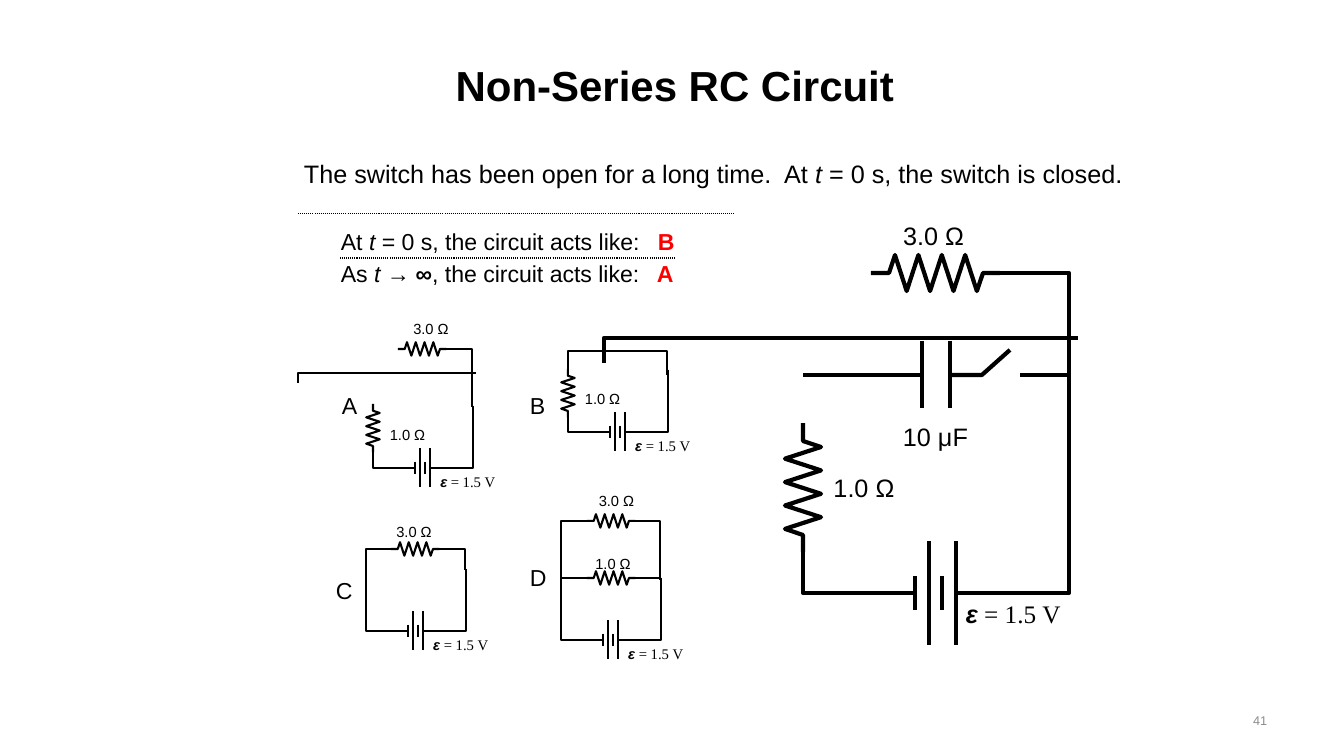
from pptx import Presentation
from pptx.dml.color import RGBColor
from pptx.enum.dml import MSO_LINE
from pptx.enum.shapes import MSO_CONNECTOR
from pptx.enum.text import MSO_ANCHOR, PP_ALIGN
from pptx.oxml.ns import qn
from pptx.util import Emu, Pt

LEFT, CENTER, RIGHT = PP_ALIGN.LEFT, PP_ALIGN.CENTER, PP_ALIGN.RIGHT
TOP, MIDDLE = MSO_ANCHOR.TOP, MSO_ANCHOR.MIDDLE
STRAIGHT, DOTTED = MSO_CONNECTOR.STRAIGHT, MSO_LINE.ROUND_DOT
PX = 914400 / 100.8
BLACK, RED, GRAY = "000000", "FF0000", "8C8C8C"
ITALIC, BOLD = {"italic": True}, {"bold": True}
SERIF = {"name": "Times New Roman"}

# Text: left, top, width, height, size, alignment, anchor, colour, [(words, format)]
TEXTS = [
    (335, 37, 680, 95, 30, CENTER, MIDDLE, BLACK, [("Non-Series RC Circuit", BOLD)]),
    (294, 153, 840, 40, 18, LEFT, TOP, BLACK, [
        ("The switch has been open for a long time.  At ", {}), ("t", ITALIC),
        (" = 0 s, the switch is closed.", {})]),
    (331, 222, 322, 38, 16.5, LEFT, TOP, BLACK, [
        ("At ", {}), ("t", ITALIC), (" = 0 s, the circuit acts like:", {})]),
    (331, 254, 322, 38, 16.5, LEFT, TOP, BLACK, [
        ("As ", {}), ("t ", ITALIC), ("→ ", SERIF), ("∞", BOLD),
        (", the circuit acts like:", {})]),
    (964, 701, 313, 40, 9, RIGHT, MIDDLE, GRAY, [("41", {})]),
]
# Letters: letter, left, top, colour, format
LETTERS = [
    ("A", 332, 386, BLACK, {}), ("B", 520, 386, BLACK, {}),
    ("C", 326, 572, BLACK, {}), ("D", 520, 558, BLACK, {}),
    ("B", 648, 222, RED, BOLD), ("A", 647, 254, RED, BOLD),
]
DOTTED_RULES = [[(298, 214), (734, 214)], [(340, 258), (675, 258)]]

LARGE = {"scale": 1, "line": 3, "size": 18, "label_height": 40}
SMALL = {"scale": 0.375, "line": 1.5, "size": 10.5, "label_height": 28}
# Labels: words, left, top, width, alignment. Resistors: left, top, upright or not.
CIRCUITS = [
    {"style": LARGE, "battery": (915, 593), "emf_width": 122,
     "resistors": [(871, 273, False), (803, 423, True)],
     "labels": [("3.0 Ω", 880, 215, 107, CENTER), ("1.0 Ω", 823, 467, 82, CENTER),
                ("10 μF", 882, 416, 107, CENTER)],
     "wires": [[(993, 273), (1069, 273), (1069, 429)],
               [(604, 363), (604, 338), (1078, 338)],
               [(950, 341), (950, 408)], [(922, 341), (922, 408)],
               [(1020, 375), (1069, 375)], [(803, 375), (922, 375)],
               [(950, 375), (982, 375), (1010, 350)]]},
    {"style": SMALL, "battery": (415, 468), "emf_width": 90,
     "resistors": [(398, 349, False), (373, 404, True)],
     "labels": [("3.0 Ω", 396, 315, 70, CENTER), ("1.0 Ω", 380, 421, 64, LEFT)],
     "wires": [[(444, 349), (472, 349), (472, 407)],
               [(298, 383), (298, 373), (476, 373)]]},
    {"style": SMALL, "battery": (610, 432), "emf_width": 90,
     "resistors": [(568, 369, True)],
     "labels": [("1.0 Ω", 575, 385, 64, LEFT)],
     "wires": [[(639, 351), (667, 351), (667, 375)],
               [(568, 375), (568, 351), (648, 351)]]},
    {"style": SMALL, "battery": (408, 631), "emf_width": 90,
     "resistors": [(391, 549, False)],
     "labels": [("3.0 Ω", 382, 518, 64, CENTER)],
     "wires": [[(437, 549), (465, 549), (465, 570)],
               [(366, 619), (366, 549), (395, 549)]]},
    {"style": SMALL, "battery": (603, 640), "emf_width": 90,
     "resistors": [(587, 578, False), (587, 521, False)],
     "labels": [("3.0 Ω", 584, 487, 65, CENTER), ("1.0 Ω", 581, 550, 64, CENTER)],
     "wires": [[(632, 521), (660, 521), (660, 580)],
               [(561, 632), (561, 521), (590, 521)],
               [(561, 578), (590, 578)], [(632, 578), (660, 578)]]},
]
EMF = [("ε", {"bold": True, "italic": True}), (" = 1.5 V", SERIF)]
# Battery parts at full scale, measured from its leftmost plate
BATTERY = [[(0, 0), (-112, 0), (-112, -47)], [(154, -166), (154, 0), (41, 0)]]
BATTERY += [[(x, -half), (x, half)] for x, half in [(0, 17), (14, 52), (27, 17), (41, 52)]]
EMF_LEFT = 41
# Resistor at full scale as (along, across): two leads and eight peaks
RESISTOR = [(0, 0), (18, 0)]
RESISTOR += [(24 + 11.7 * peak, 18 if peak % 2 else -18) for peak in range(8)]
RESISTOR += [(112, 0), (129, 0)]


def emu(pixels):
    return Emu(round(pixels * PX))


def color(value):
    return RGBColor.from_string(value)


def add_text(page, frame, size, align, anchor, ink, spans):
    box = page.shapes.add_textbox(*map(emu, frame))
    box.text_frame.word_wrap = True
    box.text_frame.vertical_anchor = anchor
    para = box.text_frame.paragraphs[0]
    para.alignment = align
    for words, changes in spans:
        span = para.add_run()
        span.text = words
        span.font.color.rgb = color(ink)
        for key, value in {"name": "Arial", "size": Pt(size), **changes}.items():
            setattr(span.font, key, value)


def add_wire(page, points, width, dash=None):
    """Draw two points as a connector and more points as an open outline."""
    points = [(emu(x), emu(y)) for x, y in points]
    if len(points) == 2:
        wire = page.shapes.add_connector(STRAIGHT, *points[0], *points[1])
        properties = wire._element.spPr
        properties.append(properties.makeelement(qn("a:effectLst"), {}))
    else:
        builder = page.shapes.build_freeform(*points[0], scale=1.0)
        builder.add_line_segments(points[1:], close=False)
        wire = builder.convert_to_shape()
        wire.fill.background()
        wire.shadow.inherit = False
    wire.line.color.rgb = color(BLACK)
    wire.line.width = Pt(width)
    if dash:
        wire.line.dash_style = dash


def place(points, left, top, scale):
    return [(left + x * scale, top + y * scale) for x, y in points]


def add_circuit(page, circuit):
    style = circuit["style"]
    scale, size, height = style["scale"], style["size"], style["label_height"]
    left, top = circuit["battery"]
    wires = circuit["wires"] + [place(part, left, top, scale) for part in BATTERY]
    for x, y, upright in circuit["resistors"]:
        zigzag = [(-across, along) for along, across in RESISTOR] if upright else RESISTOR
        wires.append(place(zigzag, x, y, scale))
    for points in wires:
        add_wire(page, points, style["line"])
    emf_frame = (left + EMF_LEFT * scale, top, circuit["emf_width"], height)
    add_text(page, emf_frame, size, LEFT, TOP, BLACK, EMF)
    for words, x, y, width, align in circuit["labels"]:
        add_text(page, (x, y, width, height), size, align, TOP, BLACK, [(words, {})])


def main():
    deck = Presentation()
    deck.slide_width, deck.slide_height = emu(1344), emu(756)
    page = deck.slides.add_slide(deck.slide_layouts[6])
    for *frame, size, align, anchor, ink, spans in TEXTS:
        add_text(page, frame, size, align, anchor, ink, spans)
    for circuit in CIRCUITS:
        add_circuit(page, circuit)
    for points in DOTTED_RULES:
        add_wire(page, points, 0.75, DOTTED)
    for letter, left, top, ink, changes in LETTERS:
        add_text(page, (left, top, 41, 38), 16.5, LEFT, TOP, ink, [(letter, changes)])
    deck.save("out.pptx")


if __name__ == "__main__":
    main()
